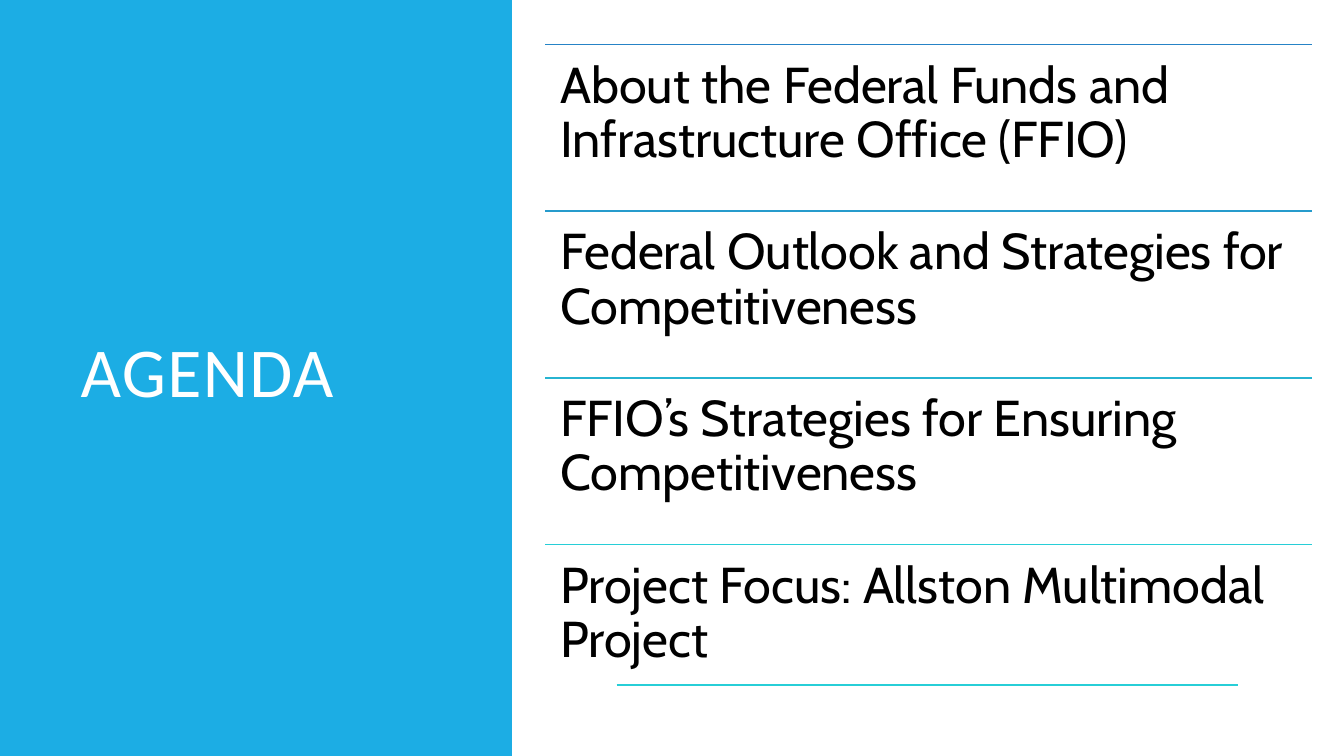
from lxml import etree
from pptx import Presentation
from pptx.dml.color import RGBColor
from pptx.enum.shapes import MSO_CONNECTOR, MSO_SHAPE
from pptx.enum.text import MSO_ANCHOR, PP_ALIGN
from pptx.oxml.ns import qn
from pptx.util import Cm, Pt

STRAIGHT = MSO_CONNECTOR.STRAIGHT
RECTANGLE = MSO_SHAPE.RECTANGLE
TOP, MIDDLE = MSO_ANCHOR.TOP, MSO_ANCHOR.MIDDLE
LEFT = PP_ALIGN.LEFT

AGENDA = [
    ("About the Federal Funds and Infrastructure Office (FFIO)", "2683C6"),
    ("Federal Outlook and Strategies for Competitiveness", "269BCC"),
    ("FFIO’s Strategies for Ensuring Competitiveness", "27B4D1"),
    ("Project Focus: Allston Multimodal Project", "27CED7"),
]


def color(value):
    return RGBColor.from_string(value)


class AgendaSlide:
    panel_color = "1CADE4"
    title_font = "Calibri"
    body_font = "Cabin"
    rule_width = Pt(1.25)

    def __init__(self, presentation):
        self.slide = presentation.slides.add_slide(presentation.slide_layouts[6])

    def panel(self, left, top, width, height):
        shape = self.slide.shapes.add_shape(
            RECTANGLE, Cm(left), Cm(top), Cm(width), Cm(height))
        shape.shadow.inherit = False
        shape.fill.solid()
        shape.fill.fore_color.rgb = color(self.panel_color)
        shape.line.fill.background()

    def rule(self, left, top, width, line_color):
        connector = self.slide.shapes.add_connector(
            STRAIGHT, Cm(left), Cm(top), Cm(left + width), Cm(top))
        connector.line.color.rgb = color(line_color)
        connector.line.width = self.rule_width
        etree.SubElement(connector._element.spPr, qn("a:effectLst"))

    def text(self, words, left, top, width, height, font, size, text_color,
             line_spacing, inset, anchor=TOP, tracking=0):
        box = self.slide.shapes.add_textbox(
            Cm(left), Cm(top), Cm(width), Cm(height))
        frame = box.text_frame
        frame.word_wrap = True
        frame.vertical_anchor = anchor
        frame.margin_left = frame.margin_right = Cm(inset)
        frame.margin_top = frame.margin_bottom = Cm(inset)
        paragraph = frame.paragraphs[0]
        paragraph.alignment = LEFT
        paragraph.line_spacing = line_spacing
        run = paragraph.add_run()
        run.text = words
        paragraph.font.name = font
        paragraph.font.size = Pt(size)
        paragraph.font.color.rgb = color(text_color)
        if tracking:
            # Letter spacing in hundredths of a point
            run.font._element.set("spc", str(tracking))


def main():
    presentation = Presentation()
    presentation.slide_width = Cm(33.87)
    presentation.slide_height = Cm(19.05)
    agenda = AgendaSlide(presentation)

    # Title panel
    agenda.panel(0, 0, 12.9, 19.05)
    agenda.text("AGENDA", 1.78, 1.78, 9.5, 15.47, agenda.title_font, 50,
                "FFFFFF", 0.8, 0.25, MIDDLE, tracking=100)

    # Agenda items, each under its own rule
    left, first_top, width, step = 13.74, 1.12, 19.33, 4.2
    for index, (words, line_color) in enumerate(AGENDA):
        top = first_top + index * step
        agenda.rule(left, top, width, line_color)
        agenda.text(words, left, top, width, step, agenda.body_font, 36,
                    "000000", 0.9, 0.38)

    # Closing rule
    agenda.rule(15.54, 17.27, 15.67, "27CED7")

    presentation.save("out.pptx")


if __name__ == "__main__":
    main()
